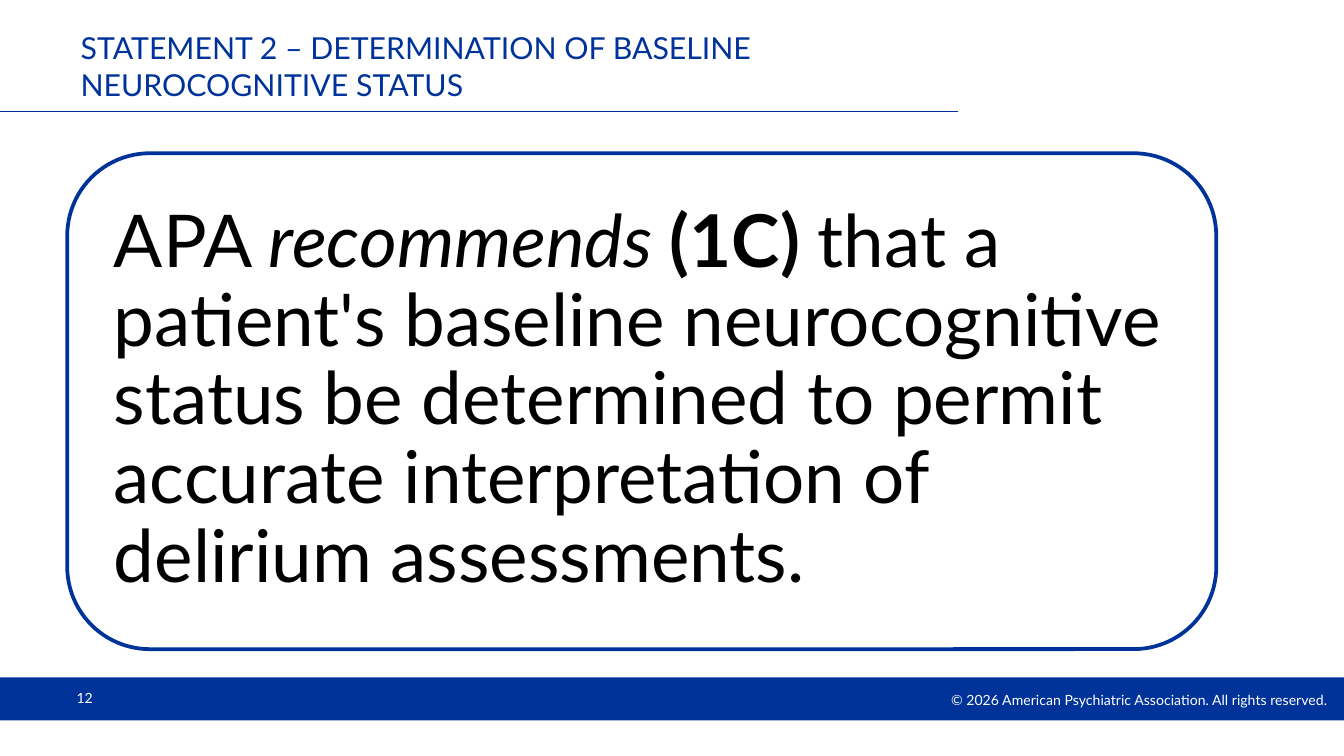
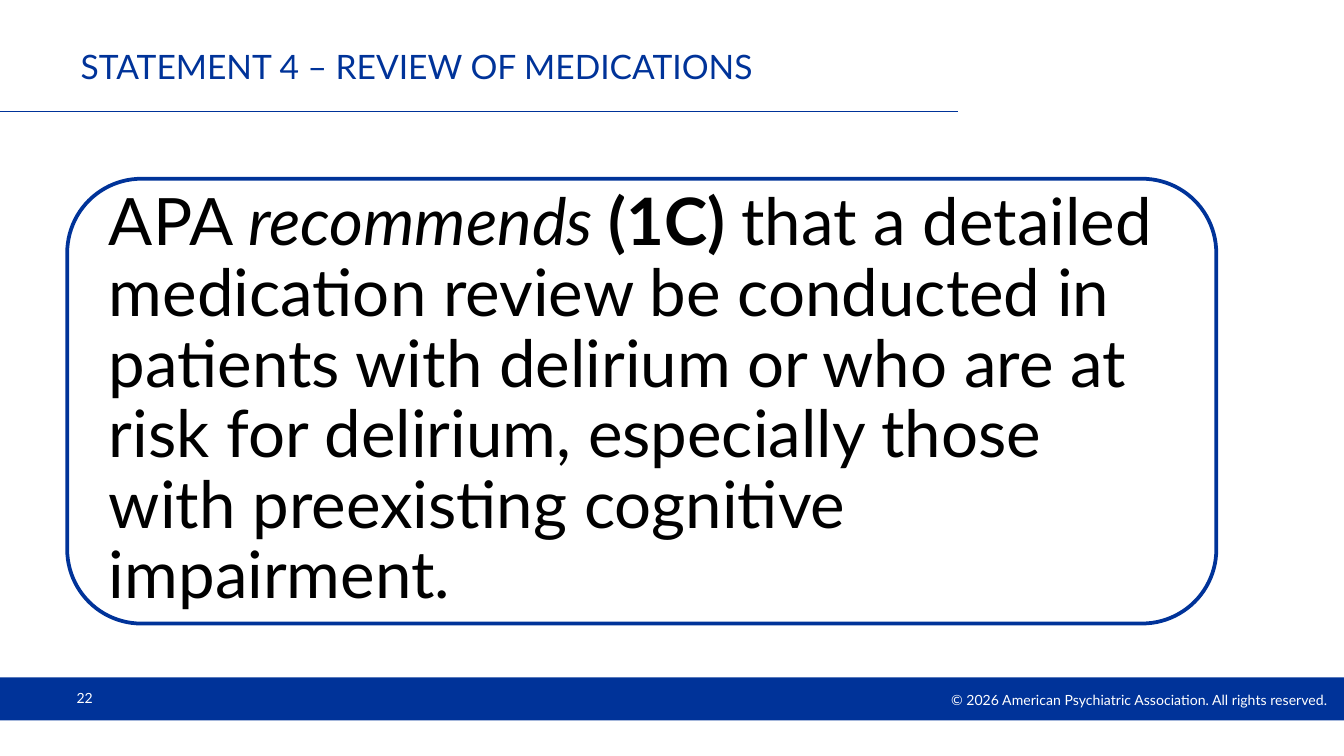
from collections import namedtuple
from dataclasses import dataclass

from lxml import etree
from pptx import Presentation
from pptx.dml.color import RGBColor
from pptx.enum import shapes, text
from pptx.oxml.ns import qn
from pptx.util import Inches, Pt

Box = namedtuple("Box", "x y w h")


@dataclass(frozen=True)
class Theme:
    font: str = "Lato"
    blue: RGBColor = RGBColor(0x00, 0x33, 0x99)
    black: RGBColor = RGBColor(0x00, 0x00, 0x00)
    white: RGBColor = RGBColor(0xFF, 0xFF, 0xFF)
    small: float = 7.5
    rule: float = 0.75
    frame: float = 2


THEME = Theme()
WIDTH = 10
HEIGHT = WIDTH * 9 / 16
HEAD = Box(0.5, 0.25, 6.63, 0.48)
FOOT = Box(0, 5.04, WIDTH, 0.32)
RIGHTS = "© 2026 American Psychiatric Association. All rights reserved. "

SLIDES = [
    dict(
        number=12,
        title="STATEMENT 2 – DETERMINATION OF BASELINE NEUROCOGNITIVE STATUS",
        head=16.2,
        box=Box(0.5, 1.14, 8.55, 3.69),
        size=39,
        body="that a patient's baseline neurocognitive status be determined "
             "to permit accurate interpretation of delirium assessments.",
    ),
    dict(
        number=22,
        title="STATEMENT 4 – REVIEW OF MEDICATIONS",
        head=18,
        box=Box(0.5, 1.33, 8.55, 3.31),
        size=35,
        body="that a detailed medication review be conducted in patients with "
             "delirium or who are at risk for delirium, especially those with "
             "preexisting cognitive impairment.",
    ),
]


def inches(box):
    return [Inches(v) for v in box]


def add_run(para, words, size, color, bold=False, italic=False):
    run = para.add_run()
    run.text = words
    font = run.font
    font.name, font.size = THEME.font, Pt(size)
    font.bold, font.italic = bold, italic
    font.color.rgb = color


def set_frame(frame, inset=(0.1, 0.05)):
    frame.word_wrap = True
    frame.vertical_anchor = text.MSO_ANCHOR.MIDDLE
    frame.margin_left = frame.margin_right = Inches(inset[0])
    frame.margin_top = frame.margin_bottom = Inches(inset[1])
    return frame.paragraphs[0]


def add_head(slide, box, title, size):
    holder = slide.shapes.title
    holder.left, holder.top, holder.width, holder.height = inches(box)
    para = set_frame(holder.text_frame)
    holder.text_frame.auto_size = text.MSO_AUTO_SIZE.NONE
    para.alignment = text.PP_ALIGN.LEFT
    add_run(para, title, size, THEME.blue)

    y, end = Inches(box.y + box.h + 0.1), Inches(box.x + box.w)
    line = slide.shapes.add_connector(
        shapes.MSO_CONNECTOR.STRAIGHT, 0, y, end, y)
    line.line.color.rgb = THEME.blue
    line.line.width = Pt(THEME.rule)
    etree.SubElement(line._element.spPr, qn("a:effectLst"))


def add_foot(slide, box, number):
    band = slide.shapes.add_shape(
        shapes.MSO_SHAPE.RECTANGLE, *inches(box))
    band.shadow.inherit = False
    band.fill.solid()
    band.fill.fore_color.rgb = THEME.blue
    band.line.fill.background()

    wide = 4.37
    rights = slide.shapes.add_textbox(
        *inches(Box(box.x + box.w - wide, box.y + 0.05, wide, 0.23)))
    para = set_frame(rights.text_frame)
    rights.text_frame.auto_size = text.MSO_AUTO_SIZE.SHAPE_TO_FIT_TEXT
    para.alignment = text.PP_ALIGN.RIGHT
    add_run(para, RIGHTS, THEME.small, THEME.white)

    page = slide.shapes.add_textbox(
        *inches(Box(box.x + 0.5, box.y, 2.33, 0.3)))
    para = set_frame(page.text_frame, (0.07, 0.04))
    add_run(para, str(number), THEME.small, THEME.white)


def add_advice(slide, box, body, size):
    group = slide.shapes.add_group_shape()
    card = group.shapes.add_shape(
        shapes.MSO_SHAPE.ROUNDED_RECTANGLE, *inches(box))
    card.shadow.inherit = False
    card.fill.background()
    card.line.color.rgb = THEME.blue
    card.line.width = Pt(THEME.frame)

    pad = box.h * 0.05
    inner = Box(box.x + pad, box.y + pad, box.w - 2 * pad, box.h - 2 * pad)
    label = group.shapes.add_textbox(*inches(inner))
    para = set_frame(label.text_frame, (size / 240, size / 240))
    para.line_spacing = 0.9
    add_run(para, "APA ", size, THEME.black)
    add_run(para, "recommends ", size, THEME.black, italic=True)
    add_run(para, "(1C) ", size, THEME.black, bold=True)
    add_run(para, body, size, THEME.black)


def add_slide(deck, number, title, head, box, size, body):
    slide = deck.slides.add_slide(deck.slide_layouts.get_by_name("Title Only"))
    add_foot(slide, FOOT, number)
    add_head(slide, HEAD, title, head)
    add_advice(slide, box, body, size)


def main():
    deck = Presentation()
    deck.slide_width, deck.slide_height = Inches(WIDTH), Inches(HEIGHT)
    for item in SLIDES:
        add_slide(deck, **item)
    deck.save("out.pptx")


if __name__ == "__main__":
    main()
